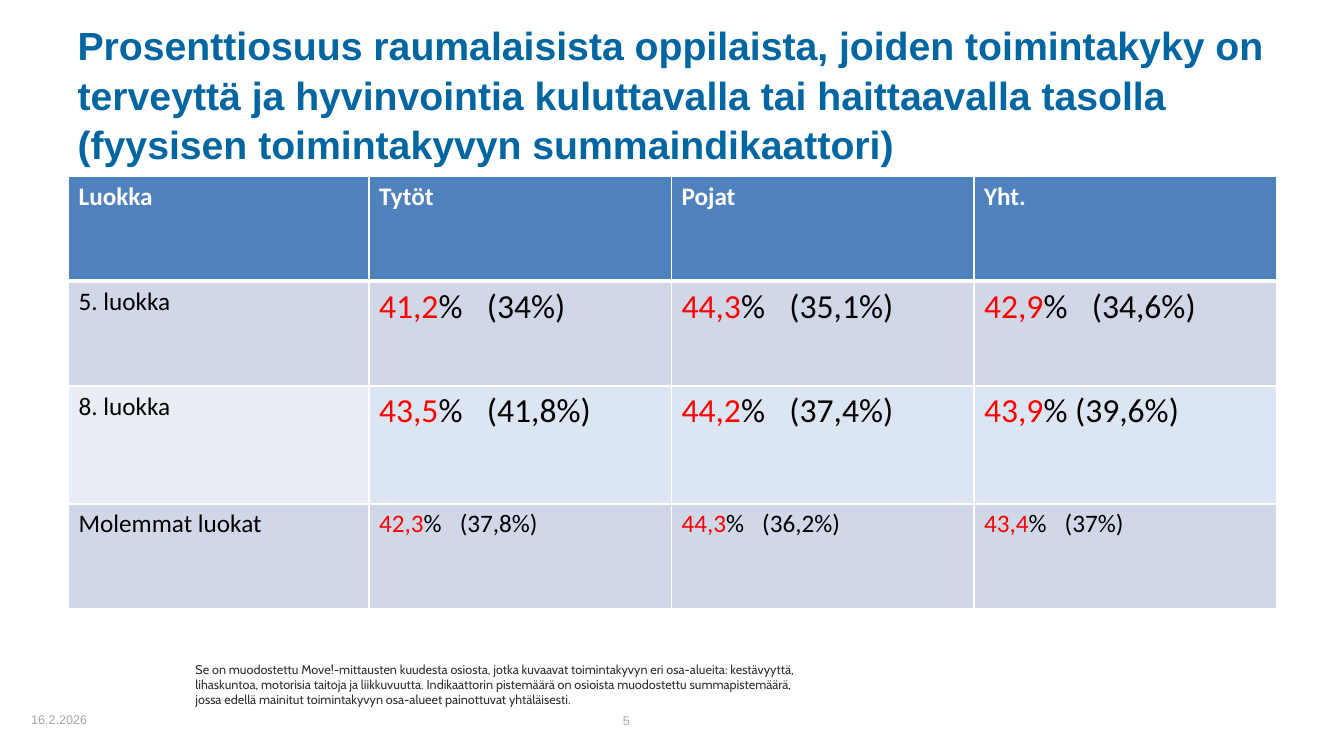
from dataclasses import dataclass

from lxml import etree
from pptx import Presentation
from pptx import util as u
from pptx.dml.color import RGBColor
from pptx.enum import text
from pptx.oxml import ns


@dataclass(frozen=True)
class Theme:
    heading_font: str = "Arial"
    table_font: str = "Calibri"
    note_font: str = "Cabin"
    heading: str = "0066A1"
    header_fill: str = "4F81BD"
    band: str = "D0D8E8"
    light_label: str = "E9EDF4"
    light_value: str = "DCE6F2"
    white: str = "FFFFFF"
    black: str = "000000"
    highlight: str = "FF0000"
    footer: str = "A6A6A6"
    note: str = "303030"
    title_size: int = 28
    value_size: int = 24
    table_size: int = 18
    small_size: int = 9


class SlideBuilder:
    def __init__(self, deck, theme):
        self.theme = theme
        self.slide = deck.slides.add_slide(deck.slide_layouts[5])

    def style(self, run, font, size, color, bold=False):
        run.font.name = font
        run.font.size = u.Pt(size)
        run.font.color.rgb = RGBColor.from_string(color)
        run.font.bold = bold

    def title(self, wording, left, top, width, height):
        heading = self.slide.shapes.title
        heading.left, heading.top = u.Inches(left), u.Inches(top)
        heading.width, heading.height = u.Inches(width), u.Inches(height)
        frame = heading.text_frame
        frame.text = wording
        frame.word_wrap = True
        frame.auto_size = text.MSO_AUTO_SIZE.NONE
        frame.vertical_anchor = text.MSO_ANCHOR.MIDDLE
        paragraph = frame.paragraphs[0]
        paragraph.alignment = text.PP_ALIGN.LEFT
        paragraph.line_spacing = 1.05
        for run in paragraph.runs:
            self.style(run, self.theme.heading_font, self.theme.title_size,
                       self.theme.heading, True)

    def small_text(self, wording, left, top, width, height, font, color):
        box = self.slide.shapes.add_textbox(
            u.Inches(left), u.Inches(top), u.Inches(width), u.Inches(height))
        frame = box.text_frame
        frame.text = wording
        frame.word_wrap = True
        frame.vertical_anchor = text.MSO_ANCHOR.MIDDLE
        self.style(frame.paragraphs[0].runs[0], font, self.theme.small_size, color)

    def table(self, left, top, widths, heights):
        grid = self.slide.shapes.add_table(
            len(heights), len(widths), u.Inches(left), u.Inches(top),
            u.Inches(sum(widths)), u.Inches(sum(heights))).table
        grid.horz_banding = False
        for column, width in zip(grid.columns, widths):
            column.width = u.Inches(width)
        for row, height in zip(grid.rows, heights):
            row.height = u.Inches(height)
        return grid

    def cell(self, cell, fill, bottom_width=1):
        cell.fill.solid()
        cell.fill.fore_color.rgb = RGBColor.from_string(fill)
        properties = cell._tc.get_or_add_tcPr()
        edges = {"lnL": 1, "lnR": 1, "lnT": 1, "lnB": bottom_width}
        for position, (edge, width) in enumerate(edges.items()):
            line = etree.Element(ns.qn(f"a:{edge}"), w=str(u.Pt(width)))
            paint = etree.SubElement(line, ns.qn("a:solidFill"))
            etree.SubElement(paint, ns.qn("a:srgbClr"), val=self.theme.white)
            properties.insert(position, line)

    def label(self, cell, wording, color, bold=False):
        cell.text_frame.text = wording
        self.style(cell.text_frame.paragraphs[0].runs[0], self.theme.table_font,
                   self.theme.table_size, color, bold)

    def share(self, cell, current, rest, size, tab_stop):
        paragraph = cell.text_frame.paragraphs[0]
        tabs = etree.SubElement(paragraph._p.get_or_add_pPr(), ns.qn("a:tabLst"))
        etree.SubElement(tabs, ns.qn("a:tab"), pos=str(u.Inches(tab_stop)), algn="l")
        for wording, color in ((current, self.theme.highlight), (rest, self.theme.black)):
            run = paragraph.add_run()
            run.text = wording
            self.style(run, self.theme.table_font, size, color)


def main():
    theme = Theme()
    deck = Presentation()
    deck.slide_width, deck.slide_height = u.Inches(13.33), u.Inches(7.5)
    page = SlideBuilder(deck, theme)

    page.title("Prosenttiosuus raumalaisista oppilaista, joiden toimintakyky on "
               "terveyttä ja hyvinvointia kuluttavalla tai haittaavalla tasolla\v"
               "(fyysisen toimintakyvyn summaindikaattori)", 0.67, 0.3, 12, 1.25)

    groups = ["Luokka", "Tytöt", "Pojat", "Yht."]
    grades = [
        ("5. luokka", theme.band, theme.band, theme.value_size, 1.07,
         [("41,2", "%\t(34%)"), ("44,3", "%\t(35,1%)"), ("42,9", "%\t(34,6%)")]),
        ("8. luokka", theme.light_label, theme.light_value, theme.value_size, 1.07,
         [("43,5", "%\t(41,8%)"), ("44,2", "%\t(37,4%)"), ("43,9", "% (39,6%)")]),
        ("Molemmat luokat", theme.band, theme.band, theme.table_size, 0.8,
         [("42,3", "%\t(37,8%)"), ("44,3", "%\t(36,2%)"), ("43,4", "%\t(37%)")]),
    ]
    results = page.table(0.68, 1.75, [2.98, 3, 3, 3], [1.04, 1.04, 1.17, 1.04])
    for column, group in enumerate(groups):
        header = results.cell(0, column)
        page.cell(header, theme.header_fill, 3)
        page.label(header, group, theme.white, True)
    for row, (grade, label_fill, value_fill, size, tab_stop, shares) in enumerate(grades, 1):
        page.cell(results.cell(row, 0), label_fill)
        page.label(results.cell(row, 0), grade, theme.black)
        for column, (current, rest) in enumerate(shares, 1):
            page.cell(results.cell(row, column), value_fill)
            page.share(results.cell(row, column), current, rest, size, tab_stop)

    page.small_text("16.2.2026", 0.21, 6.94, 1.17, 0.4, theme.heading_font, theme.footer)
    page.small_text(
        "Se on muodostettu Move!-mittausten kuudesta osiosta, jotka kuvaavat "
        "toimintakyvyn eri osa-alueita: kestävyyttä, lihaskuntoa, motorisia taitoja "
        "ja liikkuvuutta. Indikaattorin pistemäärä on osioista muodostettu "
        "summapistemäärä, jossa edellä mainitut toimintakyvyn osa-alueet painottuvat "
        "yhtäläisesti.", 1.84, 6.23, 6.25, 1.12, theme.note_font, theme.note)
    page.small_text("5", 6.08, 6.95, 3.11, 0.4, theme.heading_font, theme.footer)
    deck.save("out.pptx")


if __name__ == "__main__":
    main()
